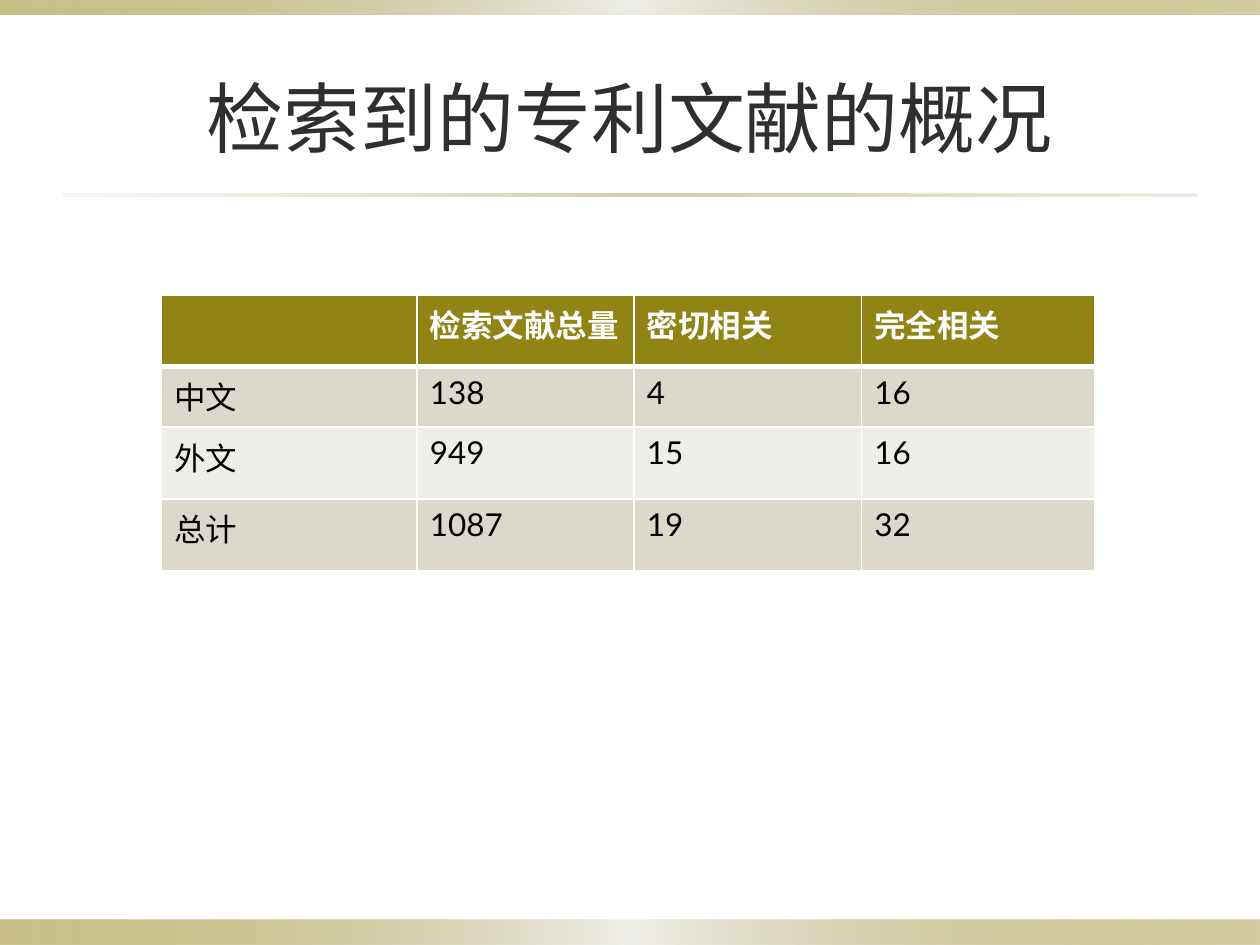
from dataclasses import dataclass

from lxml import etree
from pptx import Presentation
from pptx.dml.color import RGBColor as RGB
from pptx.enum.shapes import MSO_SHAPE as SHAPE
from pptx.enum.text import MSO_ANCHOR as ANCHOR, PP_ALIGN as ALIGN
from pptx.oxml.ns import qn
from pptx.util import Pt


@dataclass(frozen=True)
class Theme:
    font: str = "Lato"
    olive: str = "918415"
    sand: str = "DCD9CC"
    pale: str = "EEEDE8"
    white: str = "FFFFFF"
    black: str = "000000"
    title_ink: str = "2F2F2F"
    title_size: int = 44
    table_size: int = 18


theme = Theme()


def add_run(paragraph, text, size, color, bold=False):
    run = paragraph.add_run()
    run.text = text
    run.font.name = theme.font
    run.font.size = Pt(size)
    run.font.bold = bold
    run.font.color.rgb = RGB.from_string(color)


def add_color(parent, color, opacity=100):
    """Append an sRGB colour, with its opacity in percent, to an XML element."""
    srgb = etree.SubElement(parent, qn("a:srgbClr"), val=color)
    if opacity < 100:
        etree.SubElement(srgb, qn("a:alpha"), val=str(opacity * 1000))


deck = Presentation()
deck.slide_width, deck.slide_height = Pt(720), Pt(540)
slide = deck.slides.add_slide(deck.slide_layouts[6])
slide.background.fill.solid()
slide.background.fill.fore_color.rgb = RGB.from_string(theme.white)

# Edge bars and the rule under the title: (left, top, width, height), stops
edge_stops = [(0, theme.olive, 50), (50, theme.pale, 100), (100, theme.olive, 40)]
rule_stops = [(0, theme.sand, 20), (50, theme.olive, 40), (100, theme.sand, 50)]
bands = [
    ((0, 525.6, 720, 14.4), edge_stops),
    ((0, 0, 720, 8.6), edge_stops),
    ((36, 110.9, 648, 1.5), rule_stops),
]
for box, stops in bands:
    band = slide.shapes.add_shape(SHAPE.RECTANGLE, *map(Pt, box))
    band.shadow.inherit = False
    band.line.fill.background()
    band.fill.gradient()
    band.fill.gradient_angle = 0
    stop_list = next(band._element.spPr.iter(qn("a:gsLst")))
    for default_stop in list(stop_list):
        stop_list.remove(default_stop)
    for position, color, opacity in stops:
        stop = etree.SubElement(stop_list, qn("a:gs"), pos=str(position * 1000))
        add_color(stop, color, opacity)

title = slide.shapes.add_textbox(Pt(36), Pt(21.6), Pt(648), Pt(90)).text_frame
title.word_wrap = True
title.vertical_anchor = ANCHOR.MIDDLE
title.paragraphs[0].alignment = ALIGN.CENTER
add_run(title.paragraphs[0], "检索到的专利文献的概况", theme.title_size, theme.title_ink)

# Table of patent counts
counts = [
    ["", "检索文献总量", "密切相关", "完全相关"],
    ["中文", "138", "4", "16"],
    ["外文", "949", "15", "16"],
    ["总计", "1087", "19", "32"],
]
column_widths = [146, 124, 130, 133]
row_heights = [41, 34.5, 41, 41]
summary = slide.shapes.add_table(
    len(counts), len(column_widths),
    Pt(92.4), Pt(168.6), Pt(sum(column_widths)), Pt(sum(row_heights)),
).table
for column, width in zip(summary.columns, column_widths):
    column.width = Pt(width)

for r, (values, height) in enumerate(zip(counts, row_heights)):
    summary.rows[r].height = Pt(height)
    is_header = r == 0
    fill = theme.olive if is_header else (theme.pale, theme.sand)[r % 2]
    ink = theme.white if is_header else theme.black
    borders = {
        "lnL": 1,
        "lnR": 1,
        "lnT": 3 if r == 1 else 1,
        "lnB": 3 if is_header else 1,
    }
    for c, value in enumerate(values):
        cell = summary.cell(r, c)
        cell.fill.solid()
        cell.fill.fore_color.rgb = RGB.from_string(fill)
        if value:
            add_run(cell.text_frame.paragraphs[0], value, theme.table_size, ink, is_header)
        properties = cell._tc.get_or_add_tcPr()
        for order, (side, weight) in enumerate(borders.items()):
            border = etree.Element(qn(f"a:{side}"), w=str(Pt(weight)))
            add_color(etree.SubElement(border, qn("a:solidFill")), theme.white)
            properties.insert(order, border)

deck.save("out.pptx")
